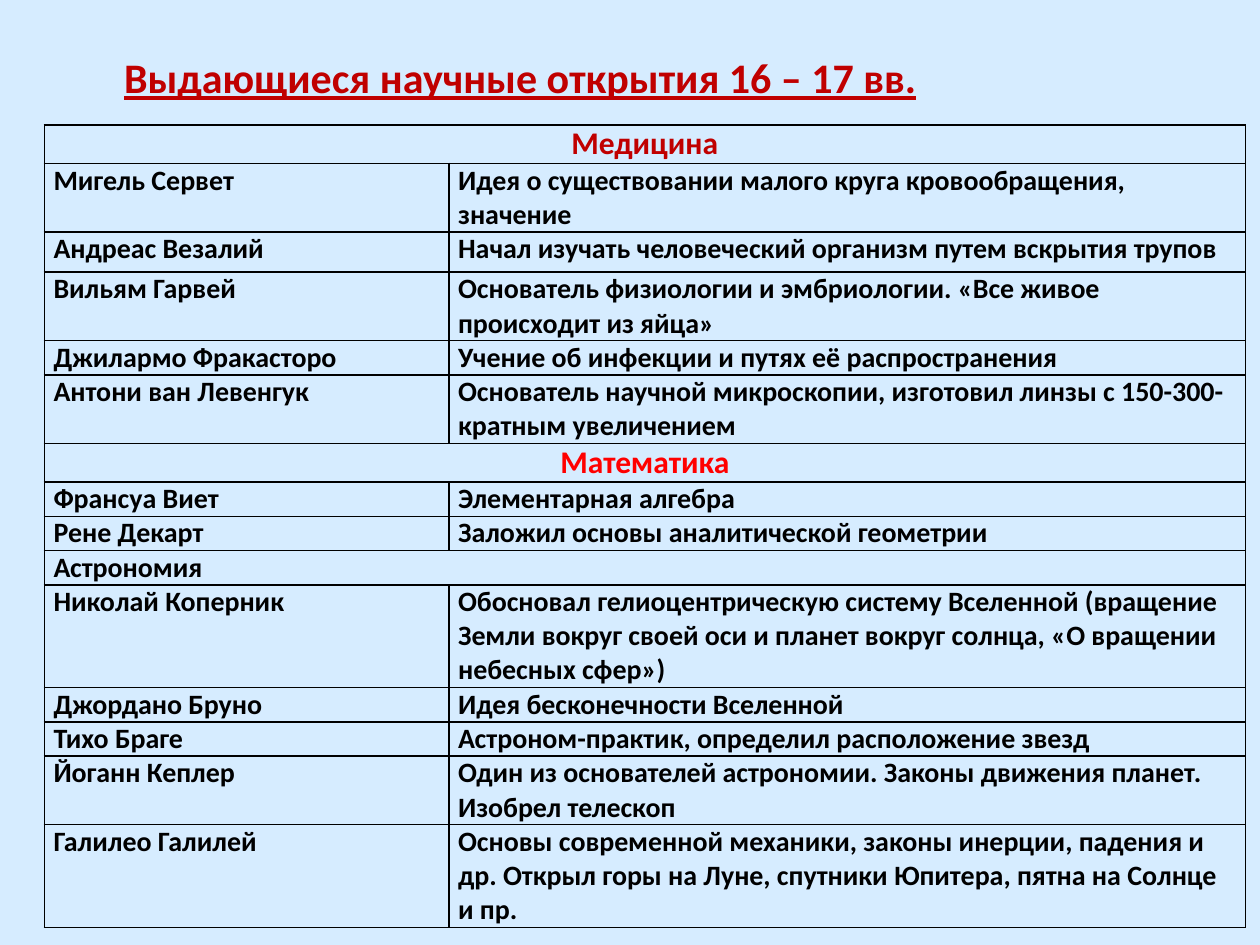
from lxml.etree import SubElement
from pptx import Presentation
from pptx.dml.color import RGBColor
from pptx.enum.text import MSO_ANCHOR as Anchor, PP_ALIGN as Align
from pptx.oxml.ns import qn
from pptx.util import Pt

BACKGROUND = RGBColor(0xD6, 0xEC, 0xFF)
DARK_RED = RGBColor(0xC0, 0x00, 0x00)
RED = RGBColor(0xFF, 0x00, 0x00)
BLACK = RGBColor(0x00, 0x00, 0x00)
LINE_HEIGHT = 19.2
HEADING_HEIGHT = 21.7

ROWS = [
    (["Медицина"], HEADING_HEIGHT),
    (["Мигель Сервет", "Идея о существовании малого круга кровообращения, значение"], 2 * LINE_HEIGHT),
    (["Андреас Везалий", "Начал изучать человеческий организм путем вскрытия трупов"], 23),
    (["Вильям Гарвей", "Основатель физиологии и эмбриологии. «Все живое происходит из яйца»"], 2 * LINE_HEIGHT),
    (["Джилармо Фракасторо", "Учение об инфекции и путях её распространения"], LINE_HEIGHT),
    (["Антони ван Левенгук",
      "Основатель научной микроскопии, изготовил линзы с 150-300-кратным увеличением"], 2 * LINE_HEIGHT),
    (["Математика"], HEADING_HEIGHT),
    (["Франсуа Виет", "Элементарная алгебра"], LINE_HEIGHT),
    (["Рене Декарт", "Заложил основы аналитической геометрии"], LINE_HEIGHT),
    (["Астрономия"], LINE_HEIGHT),
    (["Николай Коперник",
      "Обосновал гелиоцентрическую систему Вселенной (вращение Земли вокруг своей оси "
      "и планет вокруг солнца, «О вращении небесных сфер»)"], 3 * LINE_HEIGHT),
    (["Джордано Бруно", "Идея бесконечности Вселенной"], LINE_HEIGHT),
    (["Тихо Браге", "Астроном-практик, определил расположение звезд"], LINE_HEIGHT),
    (["Йоганн Кеплер",
      "Один из основателей астрономии. Законы движения планет. Изобрел телескоп"], 2 * LINE_HEIGHT),
    (["Галилео Галилей",
      "Основы современной механики, законы инерции, падения и др. Открыл горы на Луне, "
      "спутники Юпитера, пятна на Солнце и пр."], 3 * LINE_HEIGHT),
]
HEADING_COLORS = {"Медицина": DARK_RED, "Математика": RED}


def format_text(paragraph, size, color, alignment):
    paragraph.alignment = alignment
    font = paragraph.runs[0].font
    font.name = "Calibri"
    font.size = Pt(size)
    font.bold = True
    font.color.rgb = color


def add_borders(cell):
    properties = cell._tc.get_or_add_tcPr()
    for position, side in enumerate(("a:lnL", "a:lnR", "a:lnT", "a:lnB")):
        line = properties.makeelement(qn(side), {"w": str(Pt(1))})
        fill = SubElement(line, qn("a:solidFill"))
        SubElement(fill, qn("a:srgbClr"), val=str(BLACK))
        properties.insert(position, line)


presentation = Presentation()
presentation.slide_width = Pt(720)
presentation.slide_height = Pt(540)
slide = presentation.slides.add_slide(presentation.slide_layouts[5])
slide.background.fill.solid()
slide.background.fill.fore_color.rgb = BACKGROUND

title = slide.shapes.title
title.left, title.top, title.width, title.height = Pt(36.7), Pt(26), Pt(521.3), Pt(36)
title.text_frame.text = "Выдающиеся научные открытия 16 – 17 вв."
title.text_frame.vertical_anchor = Anchor.TOP
title_paragraph = title.text_frame.paragraphs[0]
format_text(title_paragraph, 24, DARK_RED, Align.CENTER)
title_paragraph.runs[0].font.underline = True

table_height = sum(height for _, height in ROWS)
table = slide.shapes.add_table(len(ROWS), 2, Pt(25.4), Pt(71.4), Pt(686.2), Pt(table_height)).table
table.first_row = False
table.horz_banding = False
table.columns[0].width = Pt(231.2)
table.columns[1].width = Pt(455)

for row, (texts, height) in zip(table.rows, ROWS):
    row.height = Pt(height)
    if len(texts) == 1:
        row.cells[0].merge(row.cells[1])
    for cell in row.cells:
        cell.margin_left = cell.margin_right = Pt(5.2)
        cell.margin_top = cell.margin_bottom = 0
        cell.fill.background()
        add_borders(cell)
    for cell, text in zip(row.cells, texts):
        cell.text_frame.text = text
        paragraph = cell.text_frame.paragraphs[0]
        if text in HEADING_COLORS:
            format_text(paragraph, 18, HEADING_COLORS[text], Align.CENTER)
        else:
            format_text(paragraph, 16, BLACK, Align.LEFT)

presentation.save("out.pptx")
